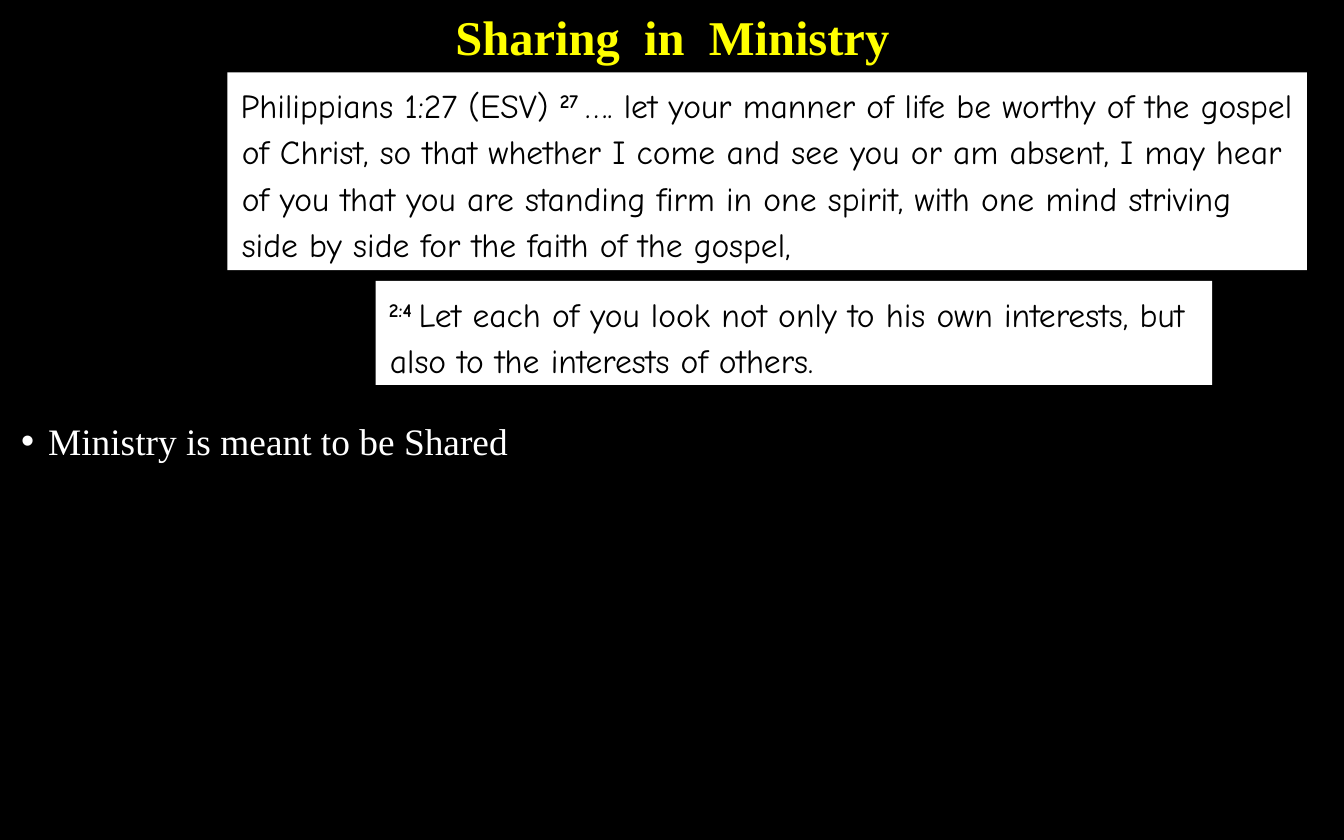
from lxml import etree
from pptx import Presentation
from pptx.dml.color import RGBColor
from pptx.enum.shapes import MSO_SHAPE
from pptx.enum.text import MSO_ANCHOR, PP_ALIGN
from pptx.oxml.ns import qn
from pptx.util import Cm, Pt

RECT = MSO_SHAPE.RECTANGLE
TOP = MSO_ANCHOR.TOP
LEFT, CENTER = PP_ALIGN.LEFT, PP_ALIGN.CENTER

COLORS = {"black": "000000", "white": "FFFFFF", "yellow": "FFFF00"}
SERIF, HAND = "Times New Roman", "Comic Neue"


def color(name):
    return RGBColor.from_string(COLORS[name])


class Deck:
    """Holds the style and the current slide."""

    def __init__(self, wide, high):
        self.prs = Presentation()
        self.prs.slide_width, self.prs.slide_height = Cm(wide), Cm(high)
        self.slide = self.prs.slides.add_slide(self.prs.slide_layouts[6])
        fill = self.slide.background.fill
        fill.solid()
        fill.fore_color.rgb = color("black")

    def style(self, font, face, size, tint, bold=False):
        font.name, font.size, font.bold = face, Pt(size), bold
        font.color.rgb = color(tint)

    def indent(self, para, size):
        """Hang the first line of a paragraph by size in cm."""
        props = para._p.get_or_add_pPr()
        props.set("marL", str(Cm(size)))
        props.set("indent", str(-Cm(size)))
        return props

    def line(self, text, box, size, tint, bold=False, align=LEFT, bullet=False):
        """Add a text box with a single line."""
        frame = self.slide.shapes.add_textbox(*map(Cm, box)).text_frame
        frame.word_wrap = True
        frame.text = text
        para = frame.paragraphs[0]
        para.alignment = align
        if bullet:
            props = self.indent(para, 0.51)
            etree.SubElement(props, qn("a:buFont")).set("typeface", "Arial")
            etree.SubElement(props, qn("a:buChar")).set("char", "•")
        self.style(para.runs[0].font, SERIF, size, tint, bold)

    def verse(self, parts, box):
        """Add a white panel; parts are (text, raised) pairs."""
        panel = self.slide.shapes.add_shape(RECT, *map(Cm, box))
        panel.shadow.inherit = False
        panel.fill.solid()
        panel.fill.fore_color.rgb = color("white")
        panel.line.fill.background()
        frame = panel.text_frame
        frame.word_wrap = True
        frame.vertical_anchor = TOP
        para = frame.paragraphs[0]
        para.alignment = LEFT
        para.line_spacing = 1.15
        self.indent(para, 0.02)
        for text, raised in parts:
            run = para.add_run()
            run.text = text
            self.style(run.font, HAND, 18, "black", raised)
            if raised:
                run._r.get_or_add_rPr().set("baseline", "30000")


def main():
    deck = Deck(25.4, 15.88)
    deck.line("Sharing  in  Ministry", (0.03, 0, 25.37, 1.37), 26, "yellow",
              bold=True, align=CENTER)
    deck.verse([
        ("2:4 ", True),
        ("Let each of you look not only to his own interests, "
         "but also to the interests of others.", False),
    ], (7.1, 5.31, 15.81, 1.97))
    deck.line("Ministry is meant to be Shared", (0.15, 7.79, 25.25, 1.12), 20,
              "white", bullet=True)
    deck.verse([
        ("Philippians 1:27 (ESV) ", False),
        ("27 ", True),
        ("…. let your manner of life be worthy of the gospel of Christ, "
         "so that whether I come and see you or am absent, I may hear of you "
         "that you are standing firm in one spirit, with one mind striving "
         "side by side for the faith of the gospel,", False),
    ], (4.3, 1.37, 20.4, 3.74))
    deck.prs.save("out.pptx")


if __name__ == "__main__":
    main()
